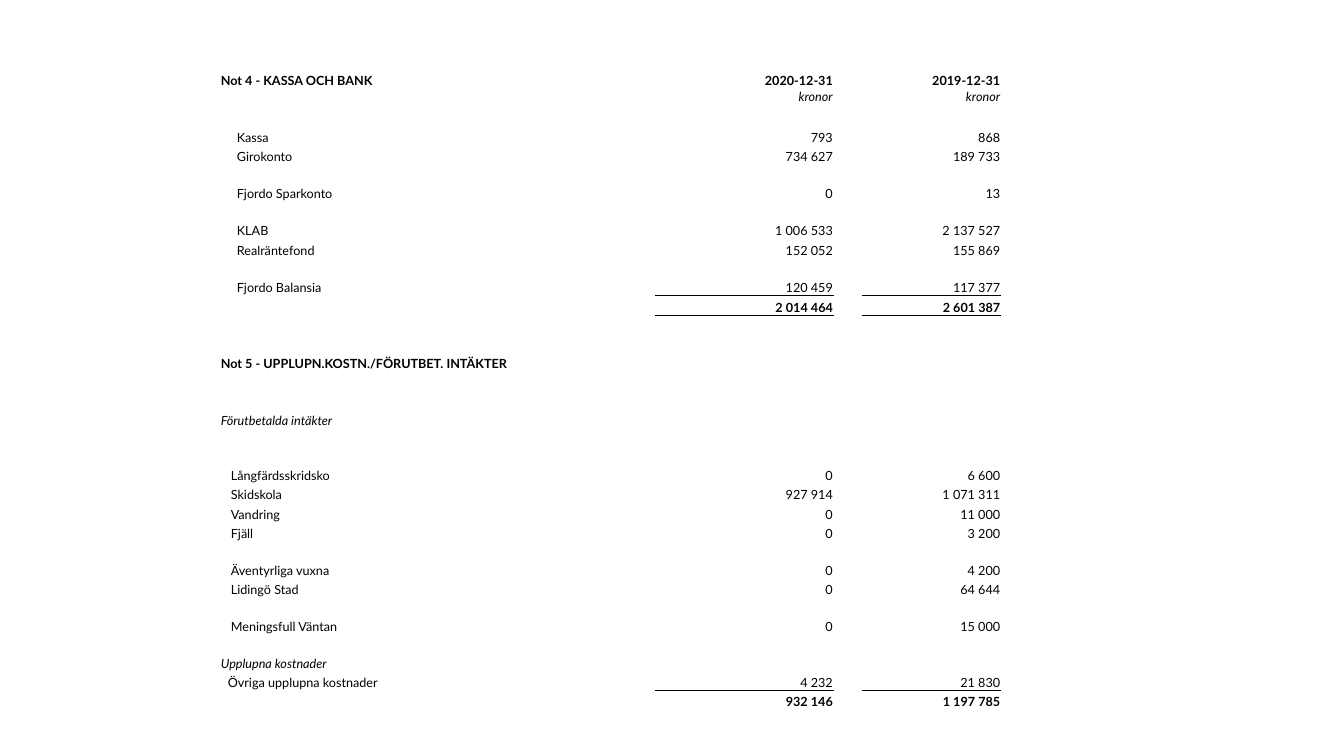
"""Build the slide with notes 4 and 5 of the annual accounts as one table."""
from lxml import etree
from pptx import Presentation
from pptx.dml.color import RGBColor
from pptx.enum.text import MSO_ANCHOR, PP_ALIGN
from pptx.oxml.ns import qn
from pptx.util import Inches, Pt

LEFT, RIGHT = PP_ALIGN.LEFT, PP_ALIGN.RIGHT
TOP, BOTTOM = MSO_ANCHOR.TOP, MSO_ANCHOR.BOTTOM
FONT, SIZE, INK = "Lato", 9, "000000"
NO_GRID_STYLE = "{2D5ABB26-0587-4C30-8999-92F81FD0307C}"
INSET = 0.01
FIRST, SECOND, THIRD = 0.17, 0.11, 0.08
COLUMN_WIDTHS = [0.81, 0.82, 1.03, 1.66, 1.77, 0.28, 1.38]
LABEL_COLUMN, YEAR_COLUMNS = 0, (4, 6)
UPPER, LOWER, TALL, TALLEST = 14.1, 13.8, 26.4, 39.5

# fields: height, label, columns spanned, label inset, values, format
ROWS = [
    (UPPER, "Not 4 - KASSA OCH BANK", 3, INSET, ("2020-12-31", "2019-12-31"), {"bold": True}),
    (UPPER, "", 1, INSET, ("kronor", "kronor"), {"italic": True, "anchor": TOP}),
    (TALL, "Kassa", 1, FIRST, ("793", "868"), {}),
    (UPPER, "Girokonto", 2, FIRST, ("734 627", "189 733"), {}),
    (TALL, "Fjordo Sparkonto", 2, FIRST, ("0", "13"), {}),
    (TALL, "KLAB", 1, FIRST, ("1 006 533", "2 137 527"), {}),
    (UPPER, "Realräntefond", 2, FIRST, ("152 052", "155 869"), {}),
    (TALL, "Fjordo Balansia", 2, FIRST, ("120 459", "117 377"), {"rule": "a:lnB"}),
    (UPPER, "", 1, INSET, ("2 014 464", "2 601 387"), {"bold": True, "rule": "a:lnT"}),
    (UPPER, "", 1, INSET, ("", ""), {}),
    (TALL, "Not 5 - UPPLUPN.KOSTN./FÖRUTBET. INTÄKTER", 4, INSET, ("", ""), {"bold": True}),
    (LOWER, "", 1, INSET, ("", ""), {}),
    (TALL, "Förutbetalda intäkter", 2, INSET, ("", ""), {"italic": True}),
    (TALLEST, "Långfärdsskridsko", 2, SECOND, ("0", "6 600"), {}),
    (LOWER, "Skidskola", 2, SECOND, ("927 914", "1 071 311"), {}),
    (LOWER, "Vandring", 2, SECOND, ("0", "11 000"), {}),
    (LOWER, "Fjäll", 1, SECOND, ("0", "3 200"), {}),
    (TALL, "Äventyrliga vuxna", 2, SECOND, ("0", "4 200"), {}),
    (LOWER, "Lidingö Stad", 2, SECOND, ("0", "64 644"), {}),
    (TALL, "Meningsfull Väntan", 2, SECOND, ("0", "15 000"), {}),
    (TALL, "Upplupna kostnader", 2, INSET, ("", ""), {"italic": True}),
    (LOWER, "Övriga upplupna kostnader", 3, THIRD, ("4 232", "21 830"), {"rule": "a:lnB"}),
    (LOWER, "", 1, INSET, ("932 146", "1 197 785"), {"bold": True, "rule": "a:lnT"}),
]


def write(cell, text, align=LEFT, inset=INSET, anchor=BOTTOM, bold=False, italic=False, rule=None):
    """Fill one cell with formatted text and an optional ruled side."""
    cell.margin_left, cell.margin_right = Inches(inset), Inches(INSET)
    cell.margin_top, cell.margin_bottom = Inches(INSET), 0
    cell.vertical_anchor = anchor
    if rule:
        line = etree.SubElement(cell._tc.get_or_add_tcPr(), qn(rule), w=str(Pt(0.5)))
        solid = etree.SubElement(line, qn("a:solidFill"))
        etree.SubElement(solid, qn("a:srgbClr"), val=INK)
    cell.fill.background()
    para = cell.text_frame.paragraphs[0]
    para.alignment = align
    if text:
        span = para.add_run()
        span.text = text
        span.font.name, span.font.size = FONT, Pt(SIZE)
        span.font.bold, span.font.italic = bold, italic
        span.font.color.rgb = RGBColor.from_string(INK)
    else:
        etree.SubElement(para._p, qn("a:endParaRPr"), sz=str(SIZE * 100))


deck = Presentation()
deck.slide_width, deck.slide_height = Inches(13.33), Inches(7.5)
page = deck.slides.add_slide(deck.slide_layouts[6])

frame = page.shapes.add_table(
    len(ROWS), len(COLUMN_WIDTHS), Inches(2.18), Inches(0.68), Inches(7.75), Inches(6.36)
)
table = frame.table
table.first_row = table.horz_banding = False
table._tbl.tblPr.find(qn("a:tableStyleId")).text = NO_GRID_STYLE
for column, width in zip(table.columns, COLUMN_WIDTHS):
    column.width = Inches(width)

for index, (height, label, columns, inset, values, style) in enumerate(ROWS):
    table.rows[index].height = Pt(height)
    if columns > 1:
        table.cell(index, LABEL_COLUMN).merge(table.cell(index, columns - 1))
    year_values = dict(zip(YEAR_COLUMNS, values))
    label_style = {key: value for key, value in style.items() if key != "rule"}
    for position in range(len(COLUMN_WIDTHS)):
        cell = table.cell(index, position)
        if position == LABEL_COLUMN:
            write(cell, label, inset=inset, **label_style)
        elif position in year_values:
            write(cell, year_values[position], align=RIGHT, **style)
        else:
            write(cell, "")

deck.save("out.pptx")
